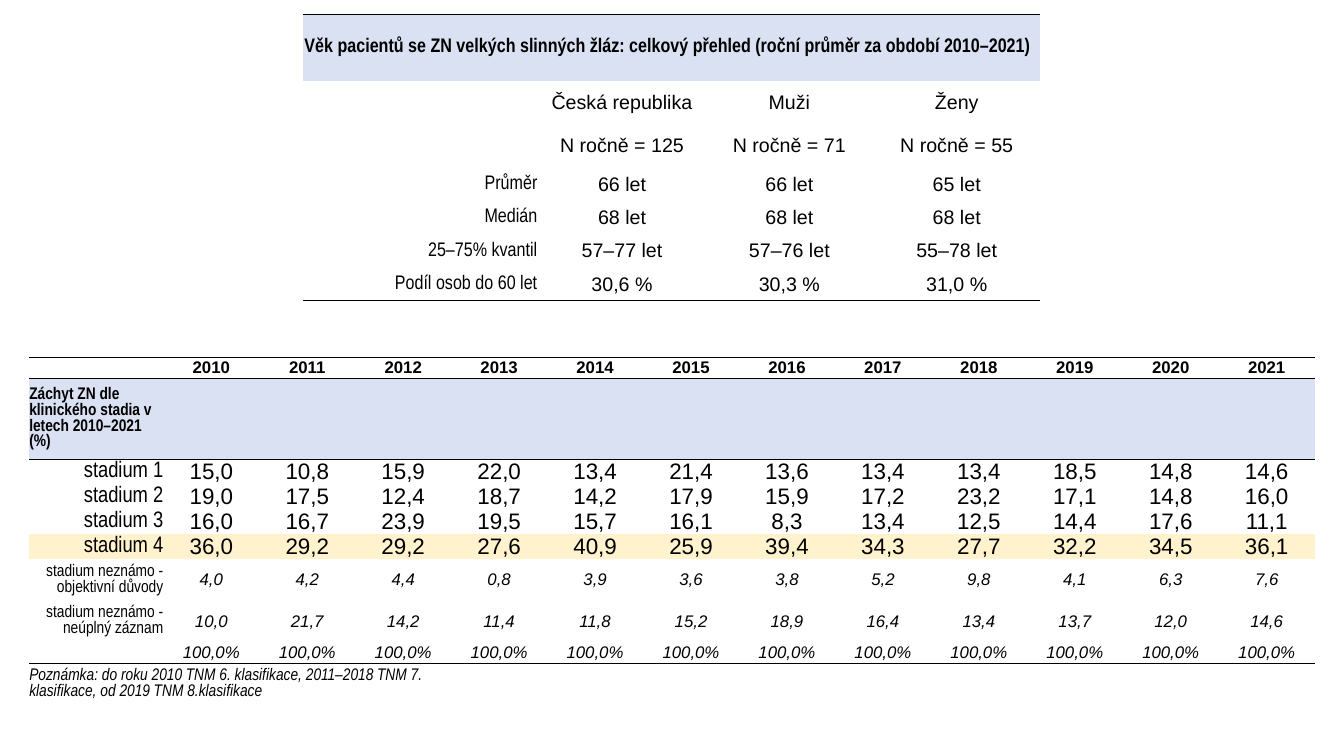
import dataclasses

import pptx
import pptx.dml.color
import pptx.enum.text
import pptx.oxml
import pptx.oxml.ns
import pptx.util
from lxml import etree
from pptx.util import Inches

ALIGN = pptx.enum.text.PP_ALIGN
BLACK, BLUE, YELLOW = "000000", "D9E1F2", "FFF2CC"
NO_STYLE = "{2D5ABB26-0587-4C30-8999-92F81FD0307C}"
YEARS = range(2010, 2022)


@dataclasses.dataclass
class Row:
    """One table row: a narrow label, its values and their look."""
    height: float
    label: str = ""
    values: str = ""
    size: int = 12
    label_font: dict = dataclasses.field(default_factory=dict)
    value_font: dict = dataclasses.field(default_factory=dict)
    align: int = ALIGN.RIGHT
    fill: str = ""
    edges: str = ""
    span: int = 1


def rgb(value):
    """Turn a hex string into a colour."""
    return pptx.dml.color.RGBColor.from_string(value)


def add_edge(cell, side):
    """Draw a thin line on the top (T) or bottom (B) of a cell."""
    ln = pptx.oxml.parse_xml(
        f'<a:ln{side} {pptx.oxml.ns.nsdecls("a")} w="6350"><a:solidFill>'
        f'<a:srgbClr val="{BLACK}"/></a:solidFill></a:ln{side}>')
    cell._tc.get_or_add_tcPr().insert(0, ln)


def write_cell(cell, text, size, align, inset, font):
    """Write formatted text in a cell, or size its empty paragraph."""
    margins = dict(margin_left=inset, margin_top=inset, margin_right=inset, margin_bottom=0)
    for name, value in margins.items():
        setattr(cell, name, Inches(value))
    cell.vertical_anchor = pptx.enum.text.MSO_ANCHOR.MIDDLE
    p = cell.text_frame.paragraphs[0]
    if not text:
        etree.SubElement(p._p, pptx.oxml.ns.qn("a:endParaRPr"), sz=str(size * 100))
        return
    p.alignment = align
    r = p.add_run()
    r.text = text
    look = dict(size=pptx.util.Pt(size), name="Arial", bold=False, italic=False)
    for name, value in {**look, **font}.items():
        setattr(r.font, name, value)
    r.font.color.rgb = rgb(BLACK)


def fill_row(table, index, row, inset):
    """Fill one table row from its description."""
    cells = list(table.rows[index].cells)
    texts = [row.label] + row.values.split("|")
    texts += [""] * (len(cells) - len(texts))
    label_font = {"name": "Arial Narrow", **row.label_font}
    for col, (cell, text) in enumerate(zip(cells, texts)):
        align, font = (ALIGN.CENTER, row.value_font) if col else (row.align, label_font)
        write_cell(cell, text, row.size, align, inset, font)
        if row.fill:
            cell.fill.solid()
            cell.fill.fore_color.rgb = rgb(row.fill)
        else:
            cell.fill.background()
        for side in row.edges:
            add_edge(cell, side)
    if row.span > 1:
        cells[0].merge(cells[row.span - 1])


def add_grid(s, box, label_width, columns, rows, inset):
    """Add a table with one label column and equal value columns."""
    frame = s.shapes.add_table(len(rows), columns + 1, *map(Inches, box))
    table = frame.table
    table.first_row = table.horz_banding = False
    table._tbl.tblPr.find(pptx.oxml.ns.qn("a:tableStyleId")).text = NO_STYLE
    for col, column in enumerate(table.columns):
        column.width = Inches((box[2] - label_width) / columns if col else label_width)
    for index, row in enumerate(rows):
        table.rows[index].height = Inches(row.height)
        fill_row(table, index, row, inset)
    frame.height = Inches(box[3])


def age_rows():
    """Describe the patient age table."""
    title = "Věk pacientů se ZN velkých slinných žláz: celkový přehled (roční průměr za období 2010–2021)"
    body = [
        (0.43, "", "Česká republika|Muži|Ženy"),
        (0.43, "", "N ročně = 125|N ročně = 71|N ročně = 55"),
        (0.33, "Průměr", "66 let|66 let|65 let"),
        (0.33, "Medián", "68 let|68 let|68 let"),
        (0.33, "25–75% kvantil", "57–77 let|57–76 let|55–78 let"),
        (0.33, "Podíl osob do 60 let", "30,6 %|30,3 %|31,0 %"),
    ]
    rows = [Row(0.66, title, size=14, label_font={"bold": True}, align=ALIGN.LEFT,
                fill=BLUE, edges="T", span=4)]
    rows += [Row(*line, size=14) for line in body]
    rows[-1].edges = "B"
    return rows


def stage_rows():
    """Describe the clinical stage table."""
    bold, italic = {"bold": True}, {"italic": True}
    stages = [
        "15,0|10,8|15,9|22,0|13,4|21,4|13,6|13,4|13,4|18,5|14,8|14,6",
        "19,0|17,5|12,4|18,7|14,2|17,9|15,9|17,2|23,2|17,1|14,8|16,0",
        "16,0|16,7|23,9|19,5|15,7|16,1|8,3|13,4|12,5|14,4|17,6|11,1",
        "36,0|29,2|29,2|27,6|40,9|25,9|39,4|34,3|27,7|32,2|34,5|36,1",
    ]
    unknown = [
        (0.41, "stadium neznámo - objektivní důvody",
         "4,0|4,2|4,4|0,8|3,9|3,6|3,8|5,2|9,8|4,1|6,3|7,6"),
        (0.41, "stadium neznámo - neúplný záznam",
         "10,0|21,7|14,2|11,4|11,8|15,2|18,9|16,4|13,4|13,7|12,0|14,6"),
        (0.21, "", "|".join(["100,0%"] * len(YEARS))),
    ]
    note = "Poznámka: do roku 2010 TNM 6. klasifikace, 2011–2018 TNM 7. klasifikace, od 2019 TNM 8.klasifikace"
    rows = [
        Row(0.21, values="|".join(map(str, YEARS)), value_font=bold, edges="BT"),
        Row(0.81, "Záchyt ZN dle klinického stadia v letech 2010–2021 (%)",
            label_font=bold, align=ALIGN.LEFT, fill=BLUE, edges="T"),
    ]
    rows += [Row(0.21, f"stadium {n}", values, size=16) for n, values in enumerate(stages, 1)]
    rows[-1].fill = YELLOW
    rows += [Row(*line, value_font=italic) for line in unknown]
    rows[-1].edges = "B"
    rows.append(Row(0.41, note, label_font=italic, align=ALIGN.LEFT, edges="T", span=4))
    return rows


def main():
    """Build and save the slide."""
    prs = pptx.Presentation()
    prs.slide_width, prs.slide_height = Inches(13.33), Inches(7.5)
    s = prs.slides.add_slide(prs.slide_layouts[6])
    add_grid(s, (3.01, 0.14, 7.31, 2.85), 2.33, 3, age_rows(), 0.01)
    add_grid(s, (0.29, 3.54, 12.75, 3.53), 1.33, len(YEARS), stage_rows(), 0)
    prs.save("out.pptx")


if __name__ == "__main__":
    main()
